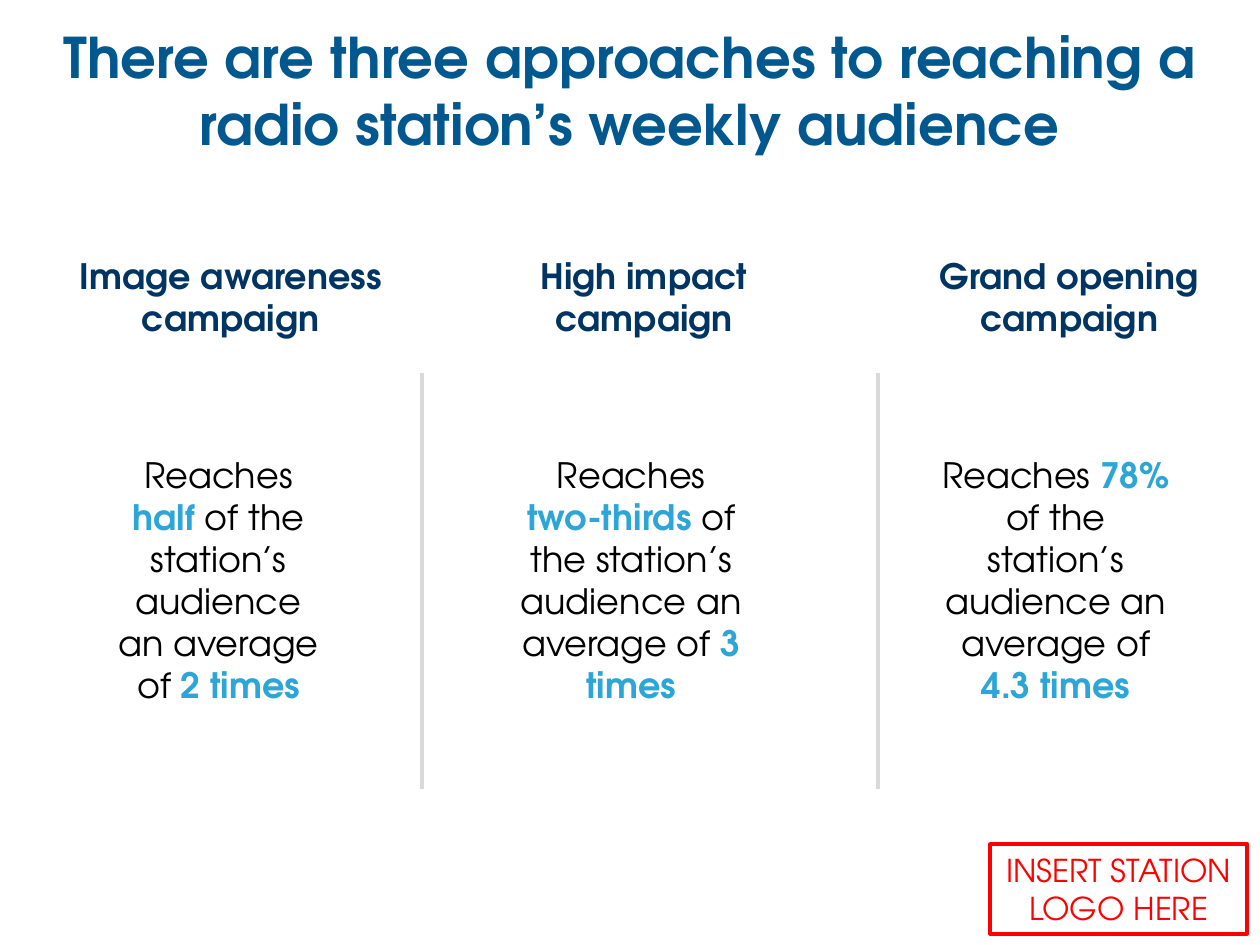
from pptx import Presentation
from pptx.dml.color import RGBColor
from pptx.enum.shapes import MSO_CONNECTOR, MSO_SHAPE
from pptx.enum.text import MSO_ANCHOR, PP_ALIGN
from pptx.oxml.ns import qn
from pptx.util import Inches, Pt
from lxml.etree import SubElement

FONT = "TeX Gyre Adventor"
TITLE_BLUE = RGBColor(0x01, 0x58, 0x8E)
NAVY = RGBColor(0x00, 0x34, 0x63)
SKY = RGBColor(0x2D, 0xA5, 0xD7)
BLACK = RGBColor(0, 0, 0)
GREY = RGBColor(0xD9, 0xD9, 0xD9)
RED = RGBColor(0xFF, 0, 0)

TITLE = "There are three approaches to reaching a radio station’s weekly audience"
PLACEHOLDER = "INSERT STATION LOGO HERE"
# Each paragraph alternates plain and highlighted text.
CAMPAIGNS = [
    dict(name="Image awareness campaign", head=(0.19, 3.08), body=(0.8, 1.87),
         text=[["Reaches ", "half", " of the station’s audience an average of ", "2 times"]]),
    dict(name="High impact campaign", head=(3.74, 2.54), body=(3.89, 2.24),
         text=[["Reaches\v", "two-thirds", " of the station’s audience an average of ", "3 times"]]),
    dict(name="Grand opening campaign", head=(7.14, 2.49), body=(7.34, 2.08),
         text=[["Reaches ", "78% ", "of the station’s audience an average of"],
               ["", "4.3 times"]]),
]
HEAD_ROW = (1.97, 0.77)
BODY_ROW = (3.55, 2.12)
DIVIDERS = (3.35, 6.97)
DIVIDER_ROW = (2.96, 6.26)


def style(p, size, color, bold=False):
    p.alignment = PP_ALIGN.CENTER
    p.font.name, p.font.size, p.font.bold = FONT, Pt(size), bold
    p.font.color.rgb = color


def add_box(s, column, row):
    (left, width), (top, height) = column, row
    box = s.shapes.add_textbox(Inches(left), Inches(top), Inches(width), Inches(height))
    box.text_frame.word_wrap = True
    return box.text_frame


def add_heading(s, campaign):
    tf = add_box(s, campaign["head"], HEAD_ROW)
    tf.margin_left = Inches(0.3)
    tf.text = campaign["name"]
    style(tf.paragraphs[0], 20, NAVY, True)


def add_body(s, campaign):
    tf = add_box(s, campaign["body"], BODY_ROW)
    for n, parts in enumerate(campaign["text"]):
        p = tf.add_paragraph() if n else tf.paragraphs[0]
        style(p, 20, BLACK)
        for i, part in enumerate(parts):
            if not part:
                continue
            r = p.add_run()
            r.text = part.rstrip("\v")
            if part.endswith("\v"):
                p.add_line_break()
            if i % 2:
                r.font.bold = True
                r.font.color.rgb = SKY


def add_divider(s, x):
    top, bottom = DIVIDER_ROW
    line = s.shapes.add_connector(MSO_CONNECTOR.STRAIGHT, Inches(x), Inches(top),
                                  Inches(x), Inches(bottom))
    line.line.color.rgb = GREY
    line.line.width = Pt(2)
    SubElement(line._element.spPr, qn("a:effectLst"))


prs = Presentation()
prs.slide_width, prs.slide_height = Inches(10), Inches(7.5)
s = prs.slides.add_slide(prs.slide_layouts[5])

title = s.shapes.title
title.left, title.top = Inches(0), Inches(0.13)
title.width, title.height = Inches(10), Inches(1.18)
title.text_frame.text = TITLE
title.text_frame.vertical_anchor = MSO_ANCHOR.TOP
style(title.text_frame.paragraphs[0], 32, TITLE_BLUE, True)

for campaign in CAMPAIGNS:
    add_heading(s, campaign)
    add_body(s, campaign)
for x in DIVIDERS:
    add_divider(s, x)

frame = s.shapes.add_shape(MSO_SHAPE.RECTANGLE, Inches(7.86), Inches(6.7),
                           Inches(2.04), Inches(0.71))
frame.shadow.inherit = False
frame.fill.background()
frame.line.color.rgb = RED
frame.line.width = Pt(2.25)
tf = frame.text_frame
tf.word_wrap = True
tf.margin_left = tf.margin_right = Inches(0.05)
tf.text = PLACEHOLDER
style(tf.paragraphs[0], 18, RED)

prs.save("out.pptx")
